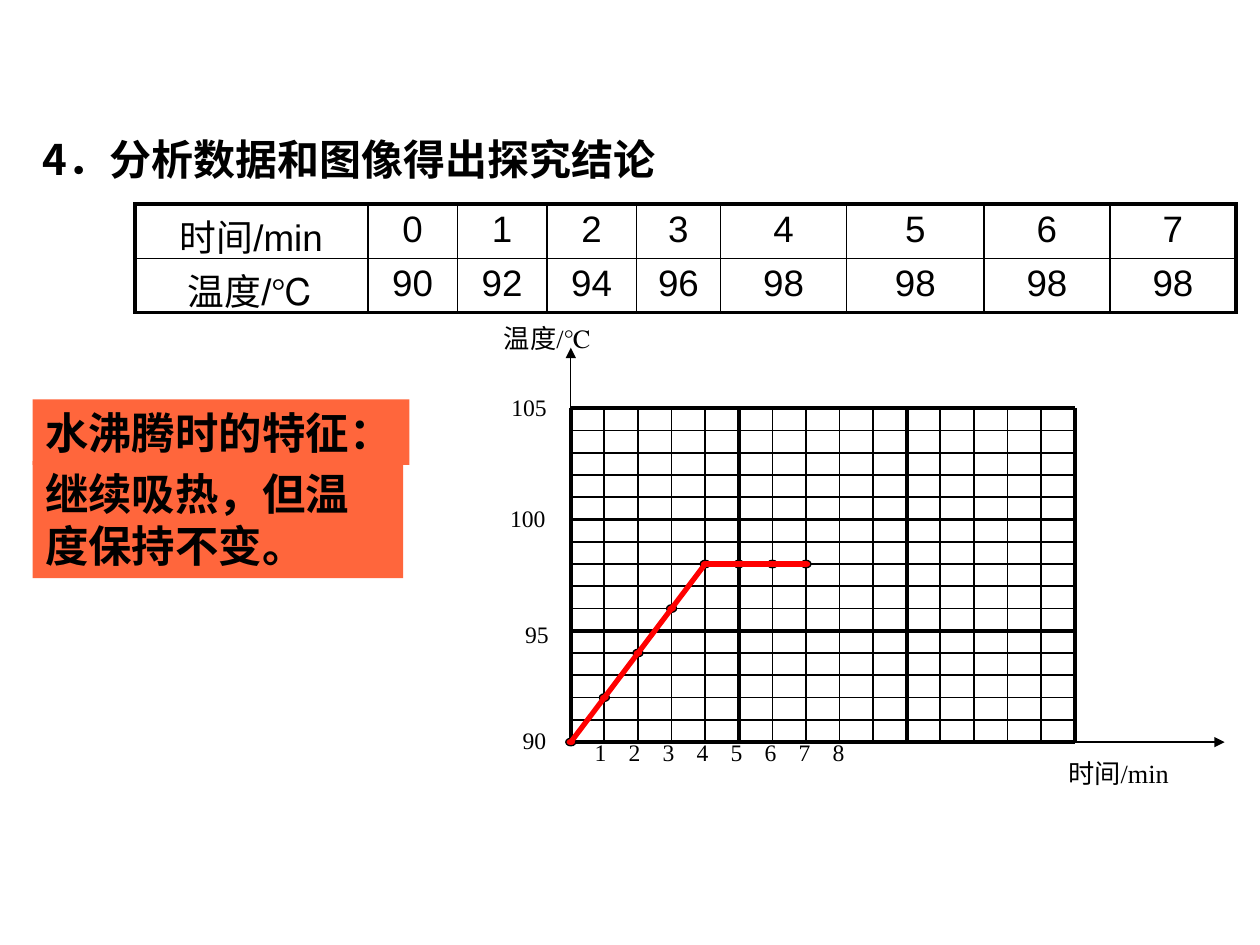
import pptx
import pptx.util
import pptx.dml.color
import pptx.enum.shapes
import pptx.enum.text
import pptx.oxml
import pptx.oxml.ns

Inches, Pt = pptx.util.Inches, pptx.util.Pt
RGB = pptx.dml.color.RGBColor
SHAPE = pptx.enum.shapes.MSO_SHAPE
ALIGN = pptx.enum.text.PP_ALIGN
ANCHOR = pptx.enum.text.MSO_ANCHOR
qn = pptx.oxml.ns.qn

BLACK = RGB(0, 0, 0)
RED = RGB(255, 0, 0)
ORANGE = RGB(0xFF, 0x66, 0x3C)
SANS, SERIF, HAN = "Arial", "Times New Roman", "Noto Sans CJK SC"

TITLE = "4．分析数据和图像得出探究结论"
HEAD = "水沸腾时的特征："
BODY = "继续吸热，但温度保持不变。"
TIMES = [0, 1, 2, 3, 4, 5, 6, 7]
TEMPS = [90, 92, 94, 96, 98, 98, 98, 98]
ROWS = [["时间/min"] + TIMES, ["温度/℃"] + TEMPS]
COLS = [1.85, 0.71, 0.71, 0.71, 0.67, 1, 1.09, 1, 1]
# text, left, top, width, size
LABELS = [
    ("105", 3.96, 3.07, 0.9, 13.5),
    ("100", 3.95, 3.95, 0.9, 13.5),
    ("95", 4.07, 4.87, 0.9, 13.5),
    ("90", 4.05, 5.71, 0.9, 13.5),
    ("温度/℃", 3.9, 2.51, 1.52, 15),
    ("时间/min", 8.38, 5.96, 2.06, 15),
] + [(str(n), 4.35 + 0.27 * n, 5.81, 0.39, 13.5) for n in range(1, 9)]

# Plot area and its 15 by 15 grid
LEFT, RIGHT, TOP, BASE = 4.53, 8.53, 3.24, 5.89
STEPS, MAJOR = 15, 5
DX, DY = (RIGHT - LEFT) / STEPS, (BASE - TOP) / STEPS


def style(frame, size, font, bold=False, align=ALIGN.LEFT):
    for par in frame.paragraphs:
        par.alignment = align
        for run in par.runs:
            run.font.size = Pt(size)
            run.font.name = font
            run.font.bold = bold
            run.font.color.rgb = BLACK
            ea = run._r.get_or_add_rPr().makeelement(qn("a:ea"), {"typeface": HAN})
            run._r.rPr.find(qn("a:latin")).addnext(ea)


def label(slide, text, x, y, w, h, size, font, bold=False):
    box = slide.shapes.add_textbox(Inches(x), Inches(y), Inches(w), Inches(h))
    frame = box.text_frame
    frame.word_wrap = True
    frame.text = text
    style(frame, size, font, bold)
    return box


def panel(slide, text, x, y, w, h, wrap):
    box = label(slide, text, x, y, w, h, 24.8, SANS, True)
    box.text_frame.word_wrap = wrap
    box.fill.solid()
    box.fill.fore_color.rgb = ORANGE


def line(slide, start, end, width, color=BLACK, arrow=False):
    ends = [Inches(v) for v in (*start, *end)]
    link = slide.shapes.add_connector(pptx.enum.shapes.MSO_CONNECTOR.STRAIGHT, *ends)
    link.line.color.rgb = color
    link.line.width = Pt(width)
    if arrow:
        pptx.oxml.ns  # arrowhead goes last inside a:ln
        ln = link.line._get_or_add_ln()
        ln.append(ln.makeelement(qn("a:tailEnd"), {"type": "triangle"}))
    props = link._element.spPr
    props.append(props.makeelement(qn("a:effectLst"), {}))


def grid(slide):
    for i in range(STEPS + 1):
        width = 1 if i % MAJOR else 2.25
        x, y = LEFT + i * DX, TOP + i * DY
        line(slide, (LEFT, y), (RIGHT, y), width)
        line(slide, (x, TOP), (x, BASE), width)
    line(slide, (LEFT, BASE), (LEFT, 2.76), 0.75, arrow=True)
    line(slide, (LEFT, BASE), (9.72, BASE), 0.75, arrow=True)


def curve(slide):
    spots = [(LEFT + t * DX, BASE - (c - 90) * DY) for t, c in zip(TIMES, TEMPS)]
    w, h = 0.08, 0.06
    for x, y in spots:
        dot = slide.shapes.add_shape(
            SHAPE.OVAL, Inches(x - w / 2), Inches(y - h / 2), Inches(w), Inches(h))
        dot.shadow.inherit = False
        dot.fill.solid()
        dot.fill.fore_color.rgb = RED
        dot.line.color.rgb = BLACK
        dot.line.width = Pt(0.75)
    line(slide, spots[0], spots[4], 3, RED)
    line(slide, spots[4], spots[7], 3, RED)


def border(cell, sides):
    """Draw cell borders; sides maps L, R, T, B to a width in points."""
    props = cell._tc.get_or_add_tcPr()
    for n, side in enumerate("LRTB"):
        props.insert(n, pptx.oxml.parse_xml(
            f'<a:ln{side} xmlns:a="http://schemas.openxmlformats.org/drawingml/2006/main"'
            f' w="{Pt(sides[side])}"><a:solidFill><a:srgbClr val="{BLACK}"/>'
            f'</a:solidFill></a:ln{side}>'))


def table(slide):
    high, wide = len(ROWS), len(COLS)
    grid = slide.shapes.add_table(
        high, wide, Inches(1.07), Inches(1.62), Inches(sum(COLS)), Inches(0.85)).table
    grid.first_row = grid.horz_banding = False
    for col, width in zip(grid.columns, COLS):
        col.width = Inches(width)
    for r, row in enumerate(ROWS):
        grid.rows[r].height = Inches(0.42)
        for c, value in enumerate(row):
            cell = grid.cell(r, c)
            cell.margin_left = cell.margin_right = Inches(0.07)
            cell.margin_top = cell.margin_bottom = Inches(0.04)
            cell.text_frame.text = str(value)
            style(cell.text_frame, 21, SANS, align=ALIGN.CENTER)
            cell.fill.background()
            outer = {"L": c == 0, "R": c == wide - 1, "T": r == 0, "B": r == high - 1}
            border(cell, {k: 2.25 if v else 1 for k, v in outer.items()})


def main():
    deck = pptx.Presentation()
    deck.slide_width, deck.slide_height = Inches(10), Inches(7.5)
    slide = deck.slides.add_slide(deck.slide_layouts[6])
    grid(slide)
    for text, x, y, w, size in LABELS:
        label(slide, text, x, y, w, 0.33, size, SERIF)
    table(slide)
    curve(slide)
    title = label(slide, TITLE, 0.24, 1.01, 5.11, 0.5, 24, HAN, True)
    title.text_frame.vertical_anchor = ANCHOR.MIDDLE
    panel(slide, BODY, 0.26, 3.66, 2.94, 0.93, True)
    panel(slide, HEAD, 0.26, 3.17, 2.99, 0.52, False)
    deck.save("out.pptx")


if __name__ == "__main__":
    main()
